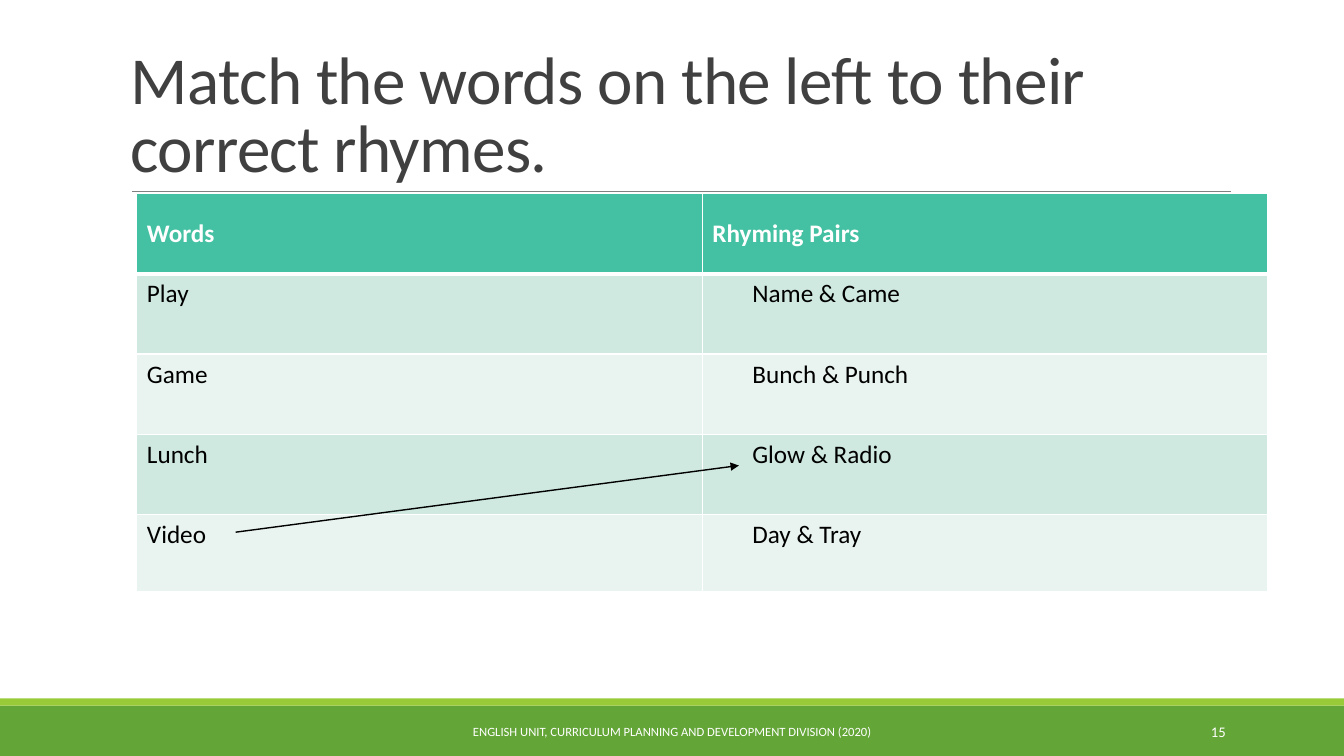
from lxml import etree
from pptx import Presentation
from pptx.dml.color import RGBColor
from pptx.enum.shapes import MSO_CONNECTOR, MSO_SHAPE
from pptx.enum.text import MSO_ANCHOR, PP_ALIGN
from pptx.oxml.ns import qn
from pptx.util import Cm, Pt

RECT, STRAIGHT = MSO_SHAPE.RECTANGLE, MSO_CONNECTOR.STRAIGHT
TOP, MIDDLE, BOTTOM = MSO_ANCHOR.TOP, MSO_ANCHOR.MIDDLE, MSO_ANCHOR.BOTTOM
LEFT, CENTER, RIGHT = PP_ALIGN.LEFT, PP_ALIGN.CENTER, PP_ALIGN.RIGHT

FONT = "Calibri"
COLORS = {
    "green": "63A537", "lime": "99CB38", "rule": "808080", "title": "404040",
    "header": "44C1A3", "odd": "CFE9E0", "even": "E9F4F0",
    "white": "FFFFFF", "black": "000000",
}
PAIRS = [
    ("Words", "Rhyming Pairs"),
    ("Play", "Name & Came"),
    ("Game", "Bunch & Punch"),
    ("Lunch", "Glow & Radio"),
    ("Video", "Day & Tray"),
]


def rgb(name):
    return RGBColor.from_string(COLORS[name])


def add_run(p, text, size, color, bold=False):
    r = p.add_run()
    r.text = text
    r.font.name, r.font.size, r.font.bold = FONT, Pt(size), bold
    r.font.color.rgb = rgb(color)
    return r


def add_text(s, box, text, size, color, align, anchor):
    tf = s.shapes.add_textbox(*map(Cm, box)).text_frame
    tf.word_wrap = True
    tf.vertical_anchor = anchor
    p = tf.paragraphs[0]
    p.alignment = align
    return p, add_run(p, text, size, color)


def add_band(s, box, color):
    sp = s.shapes.add_shape(RECT, *map(Cm, box))
    sp.shadow.inherit = False
    sp.fill.solid()
    sp.fill.fore_color.rgb = rgb(color)
    sp.line.fill.background()


def add_line(s, start, end, color, width, arrow=False):
    line = s.shapes.add_connector(STRAIGHT, *map(Cm, start + end))
    line.line.color.rgb = rgb(color)
    line.line.width = Pt(width)
    if arrow:
        etree.SubElement(line.line._get_or_add_ln(), qn("a:tailEnd"), type="triangle")
    etree.SubElement(line._element.spPr, qn("a:effectLst"))


def set_borders(cell, widths):
    tc_pr = cell._tc.get_or_add_tcPr()
    for side, width in widths.items():
        ln = etree.SubElement(tc_pr, qn(f"a:ln{side}"), w=str(Pt(width)))
        fill = etree.SubElement(ln, qn("a:solidFill"))
        etree.SubElement(fill, qn("a:srgbClr"), val=COLORS["white"])


def add_title(s, x, y, w, h):
    p, r = add_text(s, (x, y, w, h),
                    "Match the words on the left to their correct rhymes.",
                    48, "title", LEFT, BOTTOM)
    p.line_spacing = 0.85
    r.font._element.set("spc", "-50")
    # Rule under the title
    add_line(s, (x + 0.28, y + h), (x + w + 0.02, y + h), "rule", 0.5)


def add_rhymes(s, x, y, w, h):
    rows, cols = len(PAIRS), len(PAIRS[0])
    frame = s.shapes.add_table(rows, cols, Cm(x), Cm(y), Cm(w), Cm(h))
    table = frame.table
    row_h = 2.02
    for col in table.columns:
        col.width = Cm(w / cols)
    for i, row in enumerate(table.rows):
        row.height = Cm(row_h if i < rows - 1 else h - row_h * (rows - 1))
        header = i == 0
        fill = "header" if header else "odd" if i % 2 else "even"
        for j, cell in enumerate(row.cells):
            set_borders(cell, {"L": 1, "R": 1, "T": 3 if i == 1 else 1,
                               "B": 3 if header else 1})
            cell.fill.solid()
            cell.fill.fore_color.rgb = rgb(fill)
            cell.vertical_anchor = MIDDLE if header else TOP
            if j and not header:
                cell.margin_left = Cm(1.26)
            add_run(cell.text_frame.paragraphs[0], PAIRS[i][j], 18,
                    "white" if header else "black", header)
    # Worked example: Video to Glow & Radio
    add_line(s, (x + 2.49, y + 8.53), (x + w / 2 + 0.92, y + 6.85),
             "black", 1, arrow=True)


def add_footer(s, x, y, w, h):
    strip = 0.18
    add_band(s, (x, y + strip, w, h - strip), "green")
    add_band(s, (x, y, w, strip), "lime")
    text_y, text_h = y + 0.33, 1.02
    add_text(s, (x + 10.24, text_y, 13.39, text_h),
             "ENGLISH UNIT, CURRICULUM PLANNING AND DEVELOPMENT DIVISION (2020)",
             9, "white", CENTER, MIDDLE)
    add_text(s, (x + 27.51, text_y, 3.63, text_h), "15", 10.5, "white", RIGHT, MIDDLE)


def main():
    prs = Presentation()
    prs.slide_width, prs.slide_height = Cm(33.87), Cm(19.05)
    s = prs.slides.add_slide(prs.slide_layouts[6])
    add_footer(s, 0, 17.6, 33.87, 1.45)
    add_title(s, 3.05, 0.79, 27.94, 4.04)
    add_rhymes(s, 3.45, 4.88, 28.5, 10.03)
    prs.save("out.pptx")


if __name__ == "__main__":
    main()
